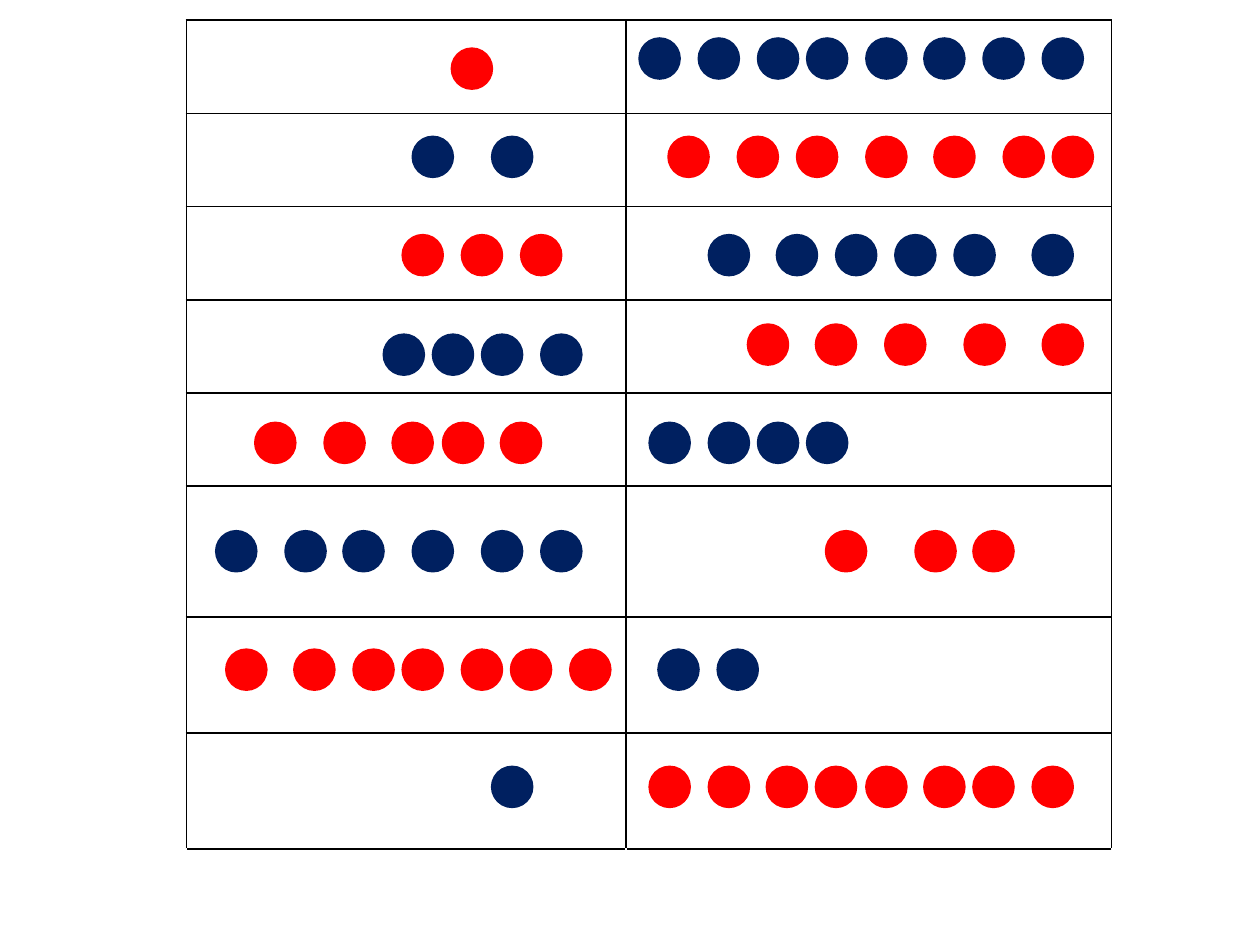
"""Build a slide with a two-column table of red and navy counters."""
from lxml.etree import SubElement
from pptx import Presentation
from pptx.dml.color import RGBColor
from pptx.enum.shapes import MSO_SHAPE as Shape
from pptx.oxml.ns import qn
from pptx.util import Inches, Pt

RED, NAVY, BLACK = "FF0000", "002060", "000000"
SIZE = 0.31
COLS = [3.49, 3.85]
ROWS = [0.74] * 5 + [1.04, 0.92, 0.92, 0.74]
DOTS = [
    (RED, 0.39, [3.59]),
    (NAVY, 0.31, [5.08, 5.55, 6.02, 6.41, 6.88, 7.34, 7.81, 8.28]),
    (NAVY, 1.09, [3.28, 3.91]),
    (RED, 1.09, [5.31, 5.86, 6.33, 6.88, 7.42, 7.97, 8.36]),
    (RED, 1.87, [3.2, 3.67, 4.14]),
    (NAVY, 1.87, [5.63, 6.17, 6.64, 7.11, 7.58, 8.2]),
    (NAVY, 2.66, [3.05, 3.44, 3.83, 4.3]),
    (RED, 2.58, [5.94, 6.48, 7.03, 7.66, 8.28]),
    (RED, 3.36, [2.03, 2.58, 3.12, 3.52, 3.98]),
    (NAVY, 3.36, [5.16, 5.63, 6.02, 6.41]),
    (NAVY, 4.22, [1.72, 2.27, 2.73, 3.28, 3.83, 4.3]),
    (RED, 4.22, [6.56, 7.27, 7.73]),
    (RED, 5.16, [1.8, 2.34, 2.81, 3.2, 3.67, 4.06, 4.53]),
    (NAVY, 5.16, [5.23, 5.7]),
    (NAVY, 6.09, [3.91]),
    (RED, 6.09, [5.16, 5.63, 6.09, 6.48, 6.88, 7.34, 7.73, 8.2]),
]


def paint(fill, color):
    fill.solid()
    fill.fore_color.rgb = RGBColor.from_string(color)


def edge(cell, sides):
    props = cell._tc.get_or_add_tcPr()
    for side in sides:
        line = SubElement(props, qn(f"a:ln{side}"), w=str(Pt(1)))
        fill = SubElement(line, qn("a:solidFill"))
        SubElement(fill, qn("a:srgbClr"), val=BLACK)
    cell.fill.background()


def add_grid(slide):
    frame = slide.shapes.add_table(
        len(ROWS), len(COLS), Inches(1.48), Inches(0.16),
        Inches(sum(COLS)), Inches(sum(ROWS)))
    table = frame.table
    table.first_row = table.horz_banding = False
    for col, width in zip(table.columns, COLS):
        col.width = Inches(width)
    for row, height in zip(table.rows, ROWS):
        row.height = Inches(height)
    for num, row in enumerate(table.rows, 1):
        for cell in row.cells:
            edge(cell, "T" if num == len(ROWS) else "LRTB")


def add_dot(slide, left, top, color):
    dot = slide.shapes.add_shape(
        Shape.FLOWCHART_CONNECTOR, Inches(left), Inches(top),
        Inches(SIZE), Inches(SIZE))
    dot.shadow.inherit = False
    paint(dot.fill, color)
    paint(dot.line.fill, color)
    dot.line.width = Pt(2)


def main():
    deck = Presentation()
    deck.slide_width, deck.slide_height = Inches(10), Inches(7.5)
    slide = deck.slides.add_slide(deck.slide_layouts[6])
    add_grid(slide)
    for color, top, lefts in DOTS:
        for left in lefts:
            add_dot(slide, left, top, color)
    deck.save("out.pptx")


if __name__ == "__main__":
    main()
